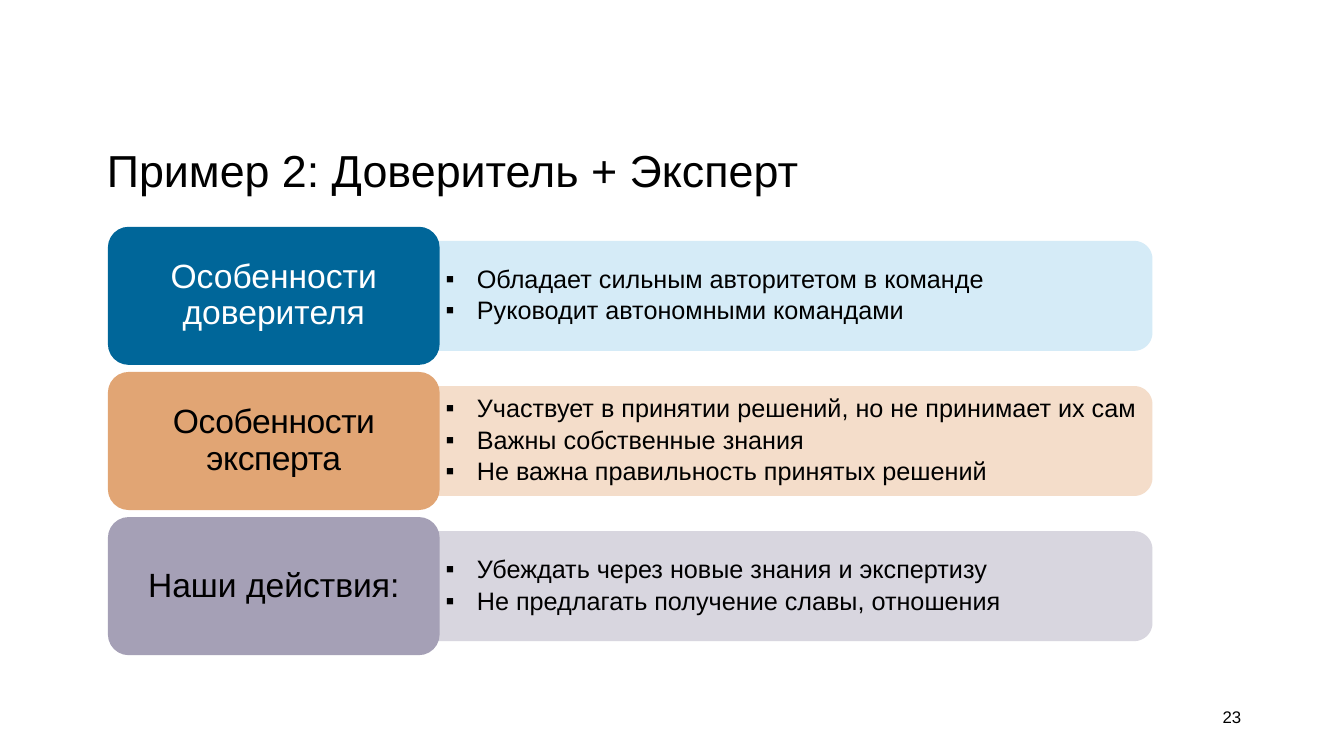
"""Build the slide on combining the trustor and expert roles."""
import math

from lxml import etree
from pptx import Presentation
from pptx import util as u
from pptx.dml.color import RGBColor
from pptx.enum import shapes, text
from pptx.oxml import ns

BLACK = RGBColor(0x00, 0x00, 0x00)
WHITE = RGBColor(0xFF, 0xFF, 0xFF)
BLUE = RGBColor(0x00, 0x66, 0x99)
PALE_BLUE = RGBColor(0xD1, 0xE9, 0xF7)
ORANGE = RGBColor(0xE1, 0xA5, 0x74)
PALE_ORANGE = RGBColor(0xF3, 0xDA, 0xC5)
VIOLET = RGBColor(0xA5, 0xA0, 0xB6)
PALE_VIOLET = RGBColor(0xD4, 0xD2, 0xDC)

ROWS = [
    ("Особенности доверителя", BLUE, WHITE, PALE_BLUE, 0,
     ["Обладает сильным авторитетом в команде",
      "Руководит автономными командами"]),
    ("Особенности эксперта", ORANGE, BLACK, PALE_ORANGE, -30,
     ["Участвует в принятии решений, но не принимает их сам",
      "Важны собственные знания",
      "Не важна правильность принятых решений"]),
    ("Наши действия:", VIOLET, BLACK, PALE_VIOLET, 0,
     ["Убеждать через новые знания и экспертизу",
      "Не предлагать получение славы, отношения"]),
]
TOP, PITCH = 2.25, 1.44
LABEL_LEFT, LABEL_WIDTH, LABEL_HEIGHT = 1.07, 3.29, 1.37
PANEL_LEFT, PANEL_RIGHT, PANEL_HEIGHT, RADIUS = 4.34, 11.43, 1.09, 0.18


def write(box, lines, size, color, anchor, margins, align, after=0, bullet=False, spacing=0):
    """Fill a shape with formatted paragraphs."""
    frame = box.text_frame
    frame.word_wrap = True
    frame.auto_size = text.MSO_AUTO_SIZE.NONE
    frame.vertical_anchor = anchor
    for side, margin in zip(("left", "top", "right", "bottom"), margins):
        setattr(frame, f"margin_{side}", u.Inches(margin))
    for index, line in enumerate(lines):
        para = frame.add_paragraph() if index else frame.paragraphs[0]
        if bullet:
            props = para._p.get_or_add_pPr()
            props.set("marL", str(u.Inches(0.31)))
            props.set("indent", str(u.Inches(-0.31)))
            etree.SubElement(props, ns.qn("a:buFont")).set("typeface", "Arial")
            etree.SubElement(props, ns.qn("a:buChar")).set("char", "▪")
        layout = {"alignment": align, "line_spacing": 0.9,
                  "space_before": u.Pt(0), "space_after": u.Pt(after)}
        for name, value in layout.items():
            setattr(para, name, value)
        span = para.add_run()
        span.text = line
        for name, value in {"name": "Arial", "size": u.Pt(size), "bold": False}.items():
            setattr(span.font, name, value)
        span.font.color.rgb = color
        if spacing:
            span._r.get_or_add_rPr().set("spc", str(spacing))


def paint(shape, color):
    """Give a shape a plain fill without outline or shadow."""
    shape.fill.solid()
    shape.fill.fore_color.rgb = color
    shape.line.fill.background()
    shape.shadow.inherit = False


deck = Presentation()
deck.slide_width, deck.slide_height = u.Inches(13.33), u.Inches(7.5)
page = deck.slides.add_slide(deck.slide_layouts[5])

title = page.shapes.title
title.left, title.top, title.width, title.height = map(u.Inches, (0.96, 1.35, 9.2, 0.73))
write(title, ["Пример 2: Доверитель + Эксперт"], 32, BLACK, text.MSO_ANCHOR.MIDDLE,
      (0.1, 0.05, 0.1, 0.05), text.PP_ALIGN.LEFT)

for row, (heading, fill, ink, pale, spacing, points) in enumerate(ROWS):
    top = TOP + row * PITCH
    panel_top = top + (LABEL_HEIGHT - PANEL_HEIGHT) / 2
    panel_bottom = panel_top + PANEL_HEIGHT
    outline = [(PANEL_LEFT, panel_bottom)]
    corners = [(panel_bottom - RADIUS, 90), (panel_top + RADIUS, 0)]
    for center, start in corners:
        for step in range(0, 91, 6):
            angle = math.radians(start - step)
            outline.append((PANEL_RIGHT - RADIUS + RADIUS * math.cos(angle),
                            center + RADIUS * math.sin(angle)))
    builder = page.shapes.build_freeform(u.Inches(PANEL_LEFT), u.Inches(panel_top))
    builder.add_line_segments([(u.Inches(x), u.Inches(y)) for x, y in outline])
    panel = builder.convert_to_shape()
    paint(panel, pale)
    tint = panel._element.spPr.find(".//" + ns.qn("a:srgbClr"))
    etree.SubElement(tint, ns.qn("a:alpha")).set("val", "90000")
    write(panel, points, 18, BLACK, text.MSO_ANCHOR.MIDDLE, (0.08, 0.09, 0.13, 0.09),
          text.PP_ALIGN.LEFT, after=3, bullet=True)

    label = page.shapes.add_shape(
        shapes.MSO_SHAPE.ROUNDED_RECTANGLE,
        *map(u.Inches, (LABEL_LEFT, top, LABEL_WIDTH, LABEL_HEIGHT)))
    label.adjustments[0] = 0.15
    paint(label, fill)
    write(label, [heading], 24, ink, text.MSO_ANCHOR.MIDDLE, (0.16, 0.08, 0.16, 0.08),
          text.PP_ALIGN.CENTER, spacing=spacing)

number = page.shapes.add_textbox(*map(u.Inches, (10.97, 6.97, 1.44, 0.29)))
write(number, ["23"], 12, BLACK, text.MSO_ANCHOR.BOTTOM, (0.1, 0.05, 0.1, 0.05),
      text.PP_ALIGN.RIGHT)

deck.save("out.pptx")
